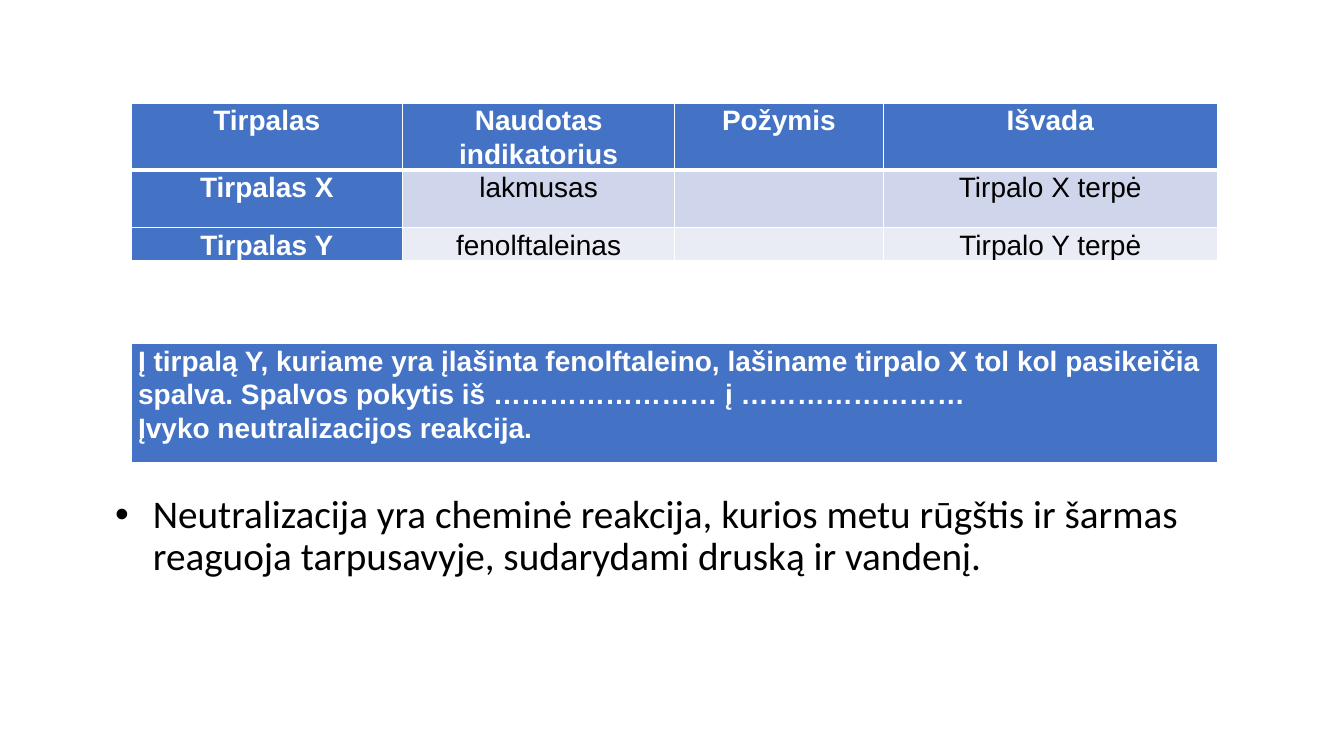
"""Builds a slide with an indicator table, a task box and a definition."""
import dataclasses

import lxml.etree
import pptx
import pptx.dml.color
import pptx.enum.text
import pptx.oxml.ns
import pptx.util

Cm, Pt = pptx.util.Cm, pptx.util.Pt
Align = pptx.enum.text.PP_ALIGN


@dataclasses.dataclass(frozen=True)
class Theme:
    blue: str = "4472C4"
    bands: tuple = ("CFD5EA", "E9EBF5")
    white: str = "FFFFFF"
    black: str = "000000"
    cell_font: str = "Arial"
    body_font: str = "Calibri"
    cell_size: int = 20
    body_size: int = 28
    thin: int = 1
    thick: int = 3


class Deck:
    def __init__(self, theme):
        self.theme = theme
        self.show = pptx.Presentation()
        self.show.slide_width, self.show.slide_height = Cm(33.87), Cm(19.05)
        self.slide = self.show.slides.add_slide(self.show.slide_layouts[1])
        title = self.slide.shapes.title.element
        title.getparent().remove(title)

    def style(self, para, name, size, color, bold=False):
        font = para.font
        font.name, font.size, font.bold = name, Pt(size), bold
        font.color.rgb = pptx.dml.color.RGBColor.from_string(color)

    def border(self, cell, side, width):
        props = cell._tc.get_or_add_tcPr()
        line = lxml.etree.SubElement(
            props, pptx.oxml.ns.qn(f"a:ln{side}"), w=str(Pt(width)))
        fill = lxml.etree.SubElement(line, pptx.oxml.ns.qn("a:solidFill"))
        lxml.etree.SubElement(
            fill, pptx.oxml.ns.qn("a:srgbClr"), val=self.theme.white)

    def cell(self, cell, text, fill, head, align, top, base):
        theme = self.theme
        for side, width in zip("LRTB", (theme.thin, theme.thin, top, base)):
            self.border(cell, side, width)
        cell.fill.solid()
        cell.fill.fore_color.rgb = pptx.dml.color.RGBColor.from_string(fill)
        cell.margin_left = cell.margin_right = Cm(0.18)
        cell.margin_top = cell.margin_bottom = 0
        cell.text = text
        for para in cell.text_frame.paragraphs:
            para.alignment, para.line_spacing = align, 1.07
            self.style(para, theme.cell_font, theme.cell_size,
                       theme.white if head else theme.black, head)

    def table(self, top, height, widths, heights, data, align):
        theme = self.theme
        frame = self.slide.shapes.add_table(
            len(data), len(widths), Cm(3.3), Cm(top), Cm(sum(widths)), Cm(height))
        grid = frame.table
        for col, width in zip(grid.columns, widths):
            col.width = Cm(width)
        for row, tall in zip(grid.rows, heights):
            row.height = Cm(tall)
        frame.height = Cm(height)
        for i, row in enumerate(data):
            for j, text in enumerate(row):
                head = i == 0 or j == 0
                fill = theme.blue if head else theme.bands[(i - 1) % 2]
                self.cell(grid.cell(i, j), text, fill, head, align,
                          theme.thick if i == 1 else theme.thin,
                          theme.thick if i == 0 else theme.thin)

    def body(self, left, top, width, height, text):
        theme = self.theme
        box = self.slide.placeholders[1]
        box.left, box.top, box.width, box.height = map(
            Cm, (left, top, width, height))
        box.text = text
        para = box.text_frame.paragraphs[0]
        para.line_spacing, para.space_before = 0.9, Pt(0)
        self.style(para, theme.body_font, theme.body_size, theme.black)
        props = para._p.get_or_add_pPr()
        props.set("marL", str(Cm(1.27)))
        props.set("indent", str(Cm(-0.95)))
        mark = pptx.oxml.ns.qn("a:buChar")
        props.insert_element_before(
            props.makeelement(mark, {"char": "•"}),
            "a:tabLst", "a:defRPr", "a:extLst")


def main():
    deck = Deck(Theme())
    deck.body(2.33, 12.34, 29.21, 4.83,
              "Neutralizacija yra cheminė reakcija, kurios metu rūgštis ir "
              "šarmas reaguoja tarpusavyje, sudarydami druską ir vandenį.")
    widths = (6.85, 6.85, 5.26, 8.42)
    deck.table(2.6, 4.08, widths, (1.45, 1.45, 0.71), (
        ("Tirpalas", "Naudotas indikatorius", "Požymis", "Išvada"),
        ("Tirpalas X", "lakmusas", "", "Tirpalo X terpė"),
        ("Tirpalas Y", "fenolftaleinas", "", "Tirpalo Y terpė"),
    ), Align.CENTER)
    task = ("Į tirpalą Y, kuriame yra įlašinta fenolftaleino, lašiname tirpalo X "
            "tol kol pasikeičia spalva. Spalvos pokytis iš …………………… į ……………………\n"
            "Įvyko neutralizacijos reakcija.")
    deck.table(8.66, 3.02, (sum(widths),), (3.02,), ((task,),), Align.LEFT)
    deck.show.save("out.pptx")


if __name__ == "__main__":
    main()
